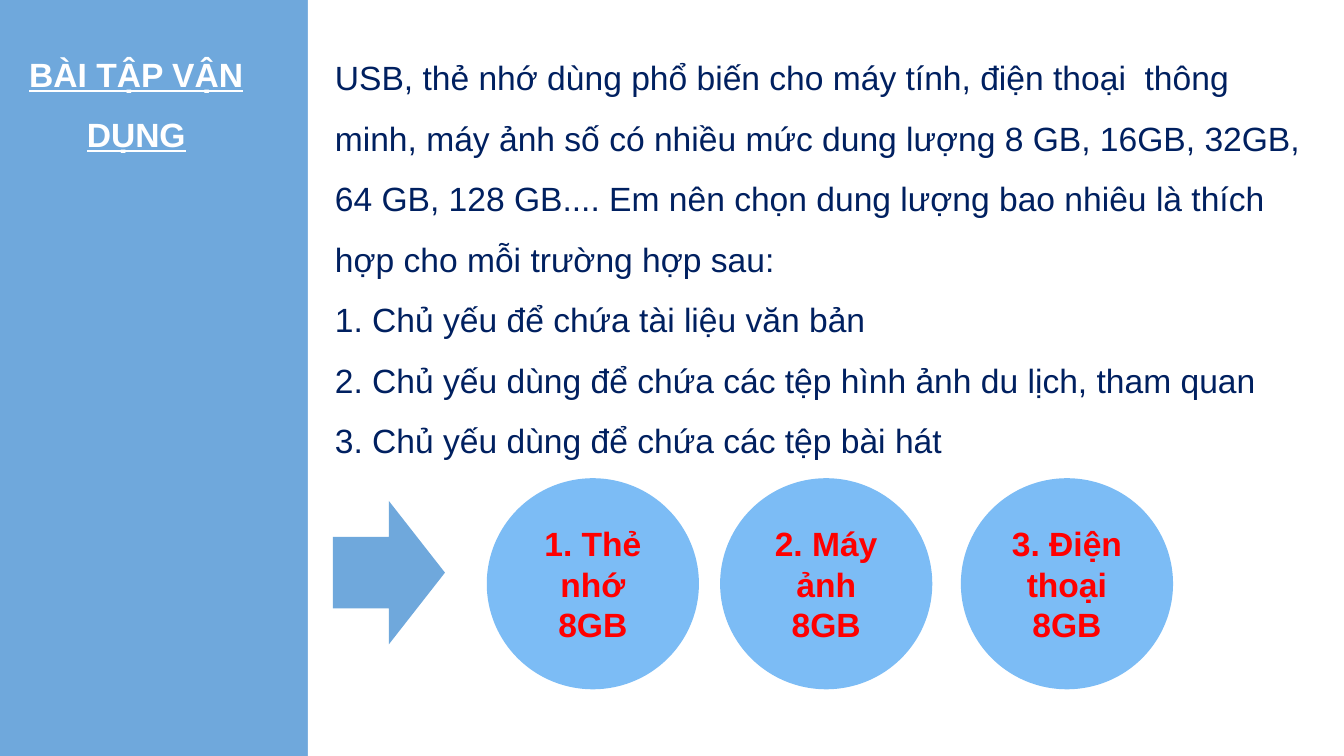
from dataclasses import dataclass

from pptx import Presentation
from pptx.dml.color import RGBColor as Rgb
from pptx.enum.shapes import MSO_SHAPE as Geo
from pptx.enum.text import MSO_ANCHOR as Anchor, MSO_AUTO_SIZE as Auto, PP_ALIGN as Align
from pptx.util import Cm, Pt

COLORS = {
    "blue": "6FA8DC",
    "sky": "7CBCF5",
    "navy": "002060",
    "red": "FF0000",
    "white": "FFFFFF",
}

BODY = """USB, thẻ nhớ dùng phổ biến cho máy tính, điện thoại  thông
minh, máy ảnh số có nhiều mức dung lượng 8 GB, 16GB, 32GB,
64 GB, 128 GB.... Em nên chọn dung lượng bao nhiêu là thích
hợp cho mỗi trường hợp sau:
1. Chủ yếu để chứa tài liệu văn bản
2. Chủ yếu dùng để chứa các tệp hình ảnh du lịch, tham quan
3. Chủ yếu dùng để chứa các tệp bài hát"""


@dataclass
class Box:
    left: float
    top: float
    width: float
    height: float

    def spans(self) -> list:
        return [Cm(v) for v in (self.left, self.top, self.width, self.height)]


@dataclass
class Answer:
    left: float
    text: str


ANSWERS = [
    Answer(9.2, "1. Thẻ nhớ 8GB"),
    Answer(13.61, "2. Máy ảnh 8GB"),
    Answer(18.16, "3. Điện thoại 8GB"),
]


def style(frame, color: str, align=Align.LEFT, space=1.0, bold=False, line=False) -> None:
    for para in frame.paragraphs:
        para.alignment = align
        para.line_spacing = space
        for run in para.runs:
            font = run.font
            font.name, font.size = "Arial", Pt(18)
            font.bold, font.underline = bold, line
            font.color.rgb = Rgb.from_string(COLORS[color])


def draw(slide, geo: Geo, box: Box, color: str):
    shape = slide.shapes.add_shape(geo, *box.spans())
    shape.shadow.inherit = False
    shape.fill.solid()
    shape.fill.fore_color.rgb = Rgb.from_string(COLORS[color])
    shape.line.fill.background()
    return shape


def circle(slide, answer: Answer) -> None:
    shape = draw(slide, Geo.OVAL, Box(answer.left, 9.04, 4.01, 3.99), "sky")
    frame = shape.text_frame
    frame.text = answer.text
    frame.word_wrap = True
    frame.vertical_anchor = Anchor.MIDDLE
    style(frame, "red", Align.CENTER, bold=True)


def main() -> None:
    deck = Presentation()
    deck.slide_width, deck.slide_height = Cm(25.4), Cm(14.29)
    slide = deck.slides.add_slide(deck.slide_layouts[5])

    # Blue background with a white panel behind the title
    back = slide.background.fill
    back.solid()
    back.fore_color.rgb = Rgb.from_string(COLORS["blue"])
    panel = draw(slide, Geo.RECTANGLE, Box(5.82, 0, 19.58, 14.29), "white")
    title = slide.shapes.title
    title._element.addprevious(panel._element)

    # Title
    title.left, title.top, title.width, title.height = Box(0.2, 0.38, 4.75, 2.39).spans()
    frame = title.text_frame
    frame.text = "BÀI TẬP VẬN DỤNG"
    frame.word_wrap = True
    frame.auto_size = Auto.NONE
    frame.vertical_anchor = Anchor.TOP
    frame.margin_left = frame.margin_right = Cm(0.25)
    frame.margin_top = frame.margin_bottom = Cm(0.25)
    style(frame, "white", Align.CENTER, 1.5, bold=True, line=True)

    # Question
    frame = slide.shapes.add_textbox(*Box(6.08, 0.58, 19.1, 8.94).spans()).text_frame
    frame.text = BODY
    frame.word_wrap = False
    frame.auto_size = Auto.SHAPE_TO_FIT_TEXT
    style(frame, "navy", space=1.5)

    # Answers
    for answer in ANSWERS:
        circle(slide, answer)
    draw(slide, Geo.RIGHT_ARROW, Box(6.29, 9.47, 2.12, 2.71), "blue")

    deck.save("out.pptx")


if __name__ == "__main__":
    main()
